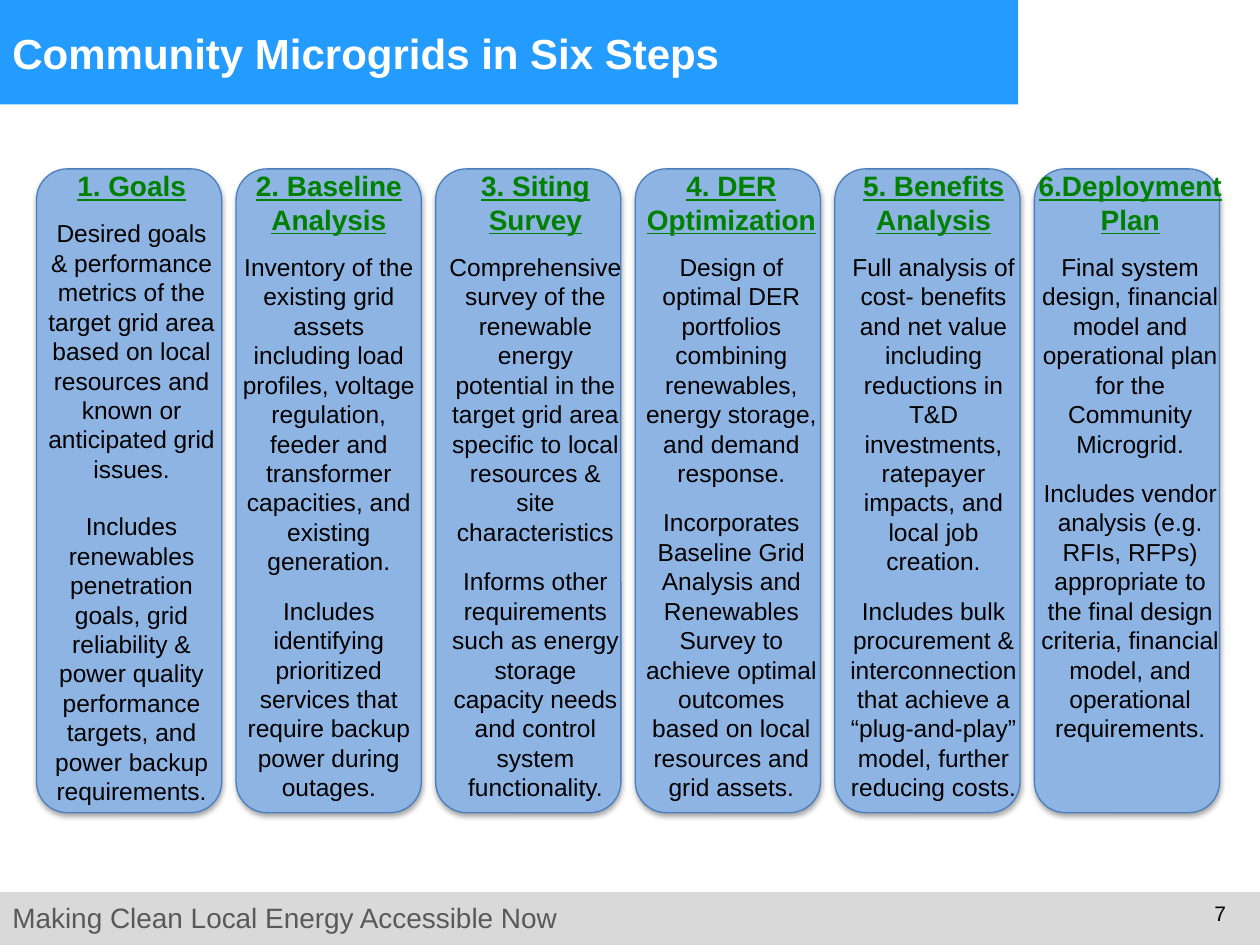
from dataclasses import dataclass
from lxml import etree
from pptx import Presentation
from pptx.dml.color import RGBColor as RGB
from pptx.enum.shapes import MSO_SHAPE as Shape
from pptx.enum.text import MSO_ANCHOR as Anchor, MSO_AUTO_SIZE as Fit, PP_ALIGN as Align
from pptx.oxml import parse_xml
from pptx.util import Inches, Pt

TITLE = "Community Microgrids in Six Steps"
FOOTER = "Making Clean Local Energy Accessible Now"
NUMBER = "7"

# heading, first text, second text, gap between them (pt), text left, width, height (in)
STEPS = [
    ("1. Goals",
     "Desired goals & performance metrics of the target grid area based on "
     "local resources and known or anticipated grid issues.",
     "Includes renewables penetration goals, grid reliability & power quality "
     "performance targets, and power backup requirements.",
     16.1, 0.26, 1.57, 5.22),
    ("2. Baseline Analysis",
     "Inventory of the existing grid assets including load profiles, voltage "
     "regulation, feeder and transformer capacities, and existing generation.",
     "Includes identifying prioritized services that require backup power "
     "during outages.",
     11.5, 1.82, 1.58, 5.15),
    ("3. Siting Survey",
     "Comprehensive survey of the renewable energy potential in the target "
     "grid area specific to local resources & site characteristics",
     "Informs other requirements such as energy storage capacity needs and "
     "control system functionality.",
     11.5, 3.46, 1.58, 5.18),
    ("4. DER Optimization",
     "Design of optimal DER portfolios combining renewables, energy storage, "
     "and demand response.",
     "Incorporates Baseline Grid Analysis and Renewables Survey to achieve "
     "optimal outcomes based on local resources and grid assets.",
     11.5, 5, 1.61, 5.18),
    ("5. Benefits Analysis",
     "Full analysis of cost- benefits and net value including reductions in "
     "T&D investments, ratepayer impacts, and local job creation.",
     "Includes bulk procurement & interconnection that achieve a "
     "“plug-and-play” model, further reducing costs.",
     11.5, 6.61, 1.6, 5.18),
    ("6.Deployment Plan",
     "Final system design, financial model and operational plan for the "
     "Community Microgrid.",
     "Includes vendor analysis (e.g. RFIs, RFPs) appropriate to the final "
     "design criteria, financial model, and operational requirements.",
     11.5, 8.13, 1.68, 4.71),
]


@dataclass(frozen=True)
class Theme:
    font: str = "Arial"
    band: str = "249CFF"
    foot: str = "D9D9D9"
    card: str = "8EB4E3"
    edge: str = "4B7EBC"
    head: str = "008000"
    ink: str = "000000"
    grey: str = "595959"
    white: str = "FFFFFF"
    title_pt: int = 24
    head_pt: int = 16
    body_pt: int = 14
    num_pt: int = 12


LOOK = Theme()
SHADE = (
    '<a:effectLst xmlns:a="http://schemas.openxmlformats.org/drawingml/2006/main">'
    '<a:outerShdw blurRad="39370" dist="22860" dir="5400000" rotWithShape="0">'
    '<a:srgbClr val="000000"><a:alpha val="35000"/></a:srgbClr>'
    '</a:outerShdw></a:effectLst>')
CARD_X, CARD_Y, CARD_W, CARD_H, PITCH = 0.29, 1.34, 1.47, 5.11, 1.584
TEXT_Y, HEAD_GAP = 1.29, 9.2


def add_block(slide, kind, box, fill, edge=None):
    block = slide.shapes.add_shape(kind, *map(Inches, box))
    block.shadow.inherit = False
    block.fill.solid()
    block.fill.fore_color.rgb = RGB.from_string(fill)
    if edge:
        block.line.color.rgb = RGB.from_string(edge)
        block.line.width = Pt(0.75)
    else:
        block.line.fill.background()
    return block


def add_card(slide, col):
    box = (CARD_X + col * PITCH, CARD_Y, CARD_W, CARD_H)
    card = add_block(slide, Shape.ROUNDED_RECTANGLE, box, LOOK.card, LOOK.edge)
    props = card.fill._xPr
    props.replace(props.find("{*}effectLst"), parse_xml(SHADE))


def add_text(slide, box, paras, align=Align.LEFT, anchor=Anchor.TOP, fit=Fit.NONE):
    """Each para is text, size, colour, bold, underline, space before in points."""
    frame = slide.shapes.add_textbox(*map(Inches, box)).text_frame
    frame.word_wrap = True
    frame.auto_size = fit
    frame.vertical_anchor = anchor
    for i, (text, size, color, bold, under, gap) in enumerate(paras):
        para = frame.add_paragraph() if i else frame.paragraphs[0]
        para.text = text
        para.alignment = align
        if gap:
            para.space_before = Pt(gap)
        font = para.font
        font.name, font.size = LOOK.font, Pt(size)
        font.bold, font.underline = bold, under
        font.color.rgb = RGB.from_string(color)


def add_step(slide, step):
    head, first, second, gap, left, width, height = step
    body = (LOOK.body_pt, LOOK.ink, False, False)
    paras = [(head, LOOK.head_pt, LOOK.head, True, True, 0),
             (first, *body, HEAD_GAP),
             (second, *body, gap)]
    add_text(slide, (left, TEXT_Y, width, height), paras, Align.CENTER,
             fit=Fit.SHAPE_TO_FIT_TEXT)


def main():
    deck = Presentation()
    deck.slide_width, deck.slide_height = Inches(10), Inches(7.5)
    slide = deck.slides.add_slide(deck.slide_layouts[6])

    add_block(slide, Shape.RECTANGLE, (0, 7.08, 10, 0.42), LOOK.foot)
    add_text(slide, (0, 7.1, 5.17, 0.37),
             [(FOOTER, LOOK.head_pt, LOOK.grey, False, False, 0)])
    add_block(slide, Shape.RECTANGLE, (0, 0, 8.08, 0.83), LOOK.band)
    add_text(slide, (9.33, 7.1, 0.5, 0.4),
             [(NUMBER, LOOK.num_pt, LOOK.ink, False, False, 0)], Align.RIGHT)
    add_text(slide, (0, 0, 8.31, 0.83),
             [(TITLE, LOOK.title_pt, LOOK.white, True, False, 0)],
             anchor=Anchor.MIDDLE)

    for col in range(len(STEPS)):
        add_card(slide, col)
    for step in STEPS:
        add_step(slide, step)
    deck.save("out.pptx")


if __name__ == "__main__":
    main()
